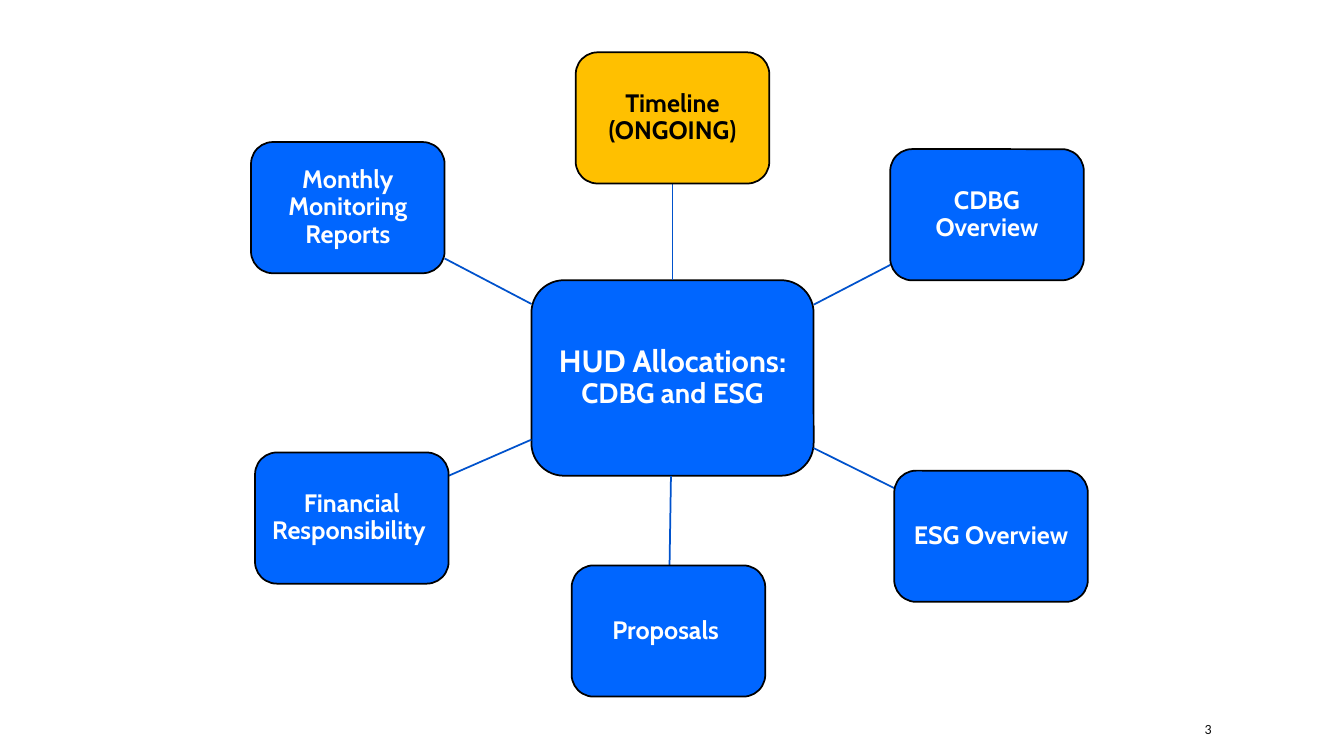
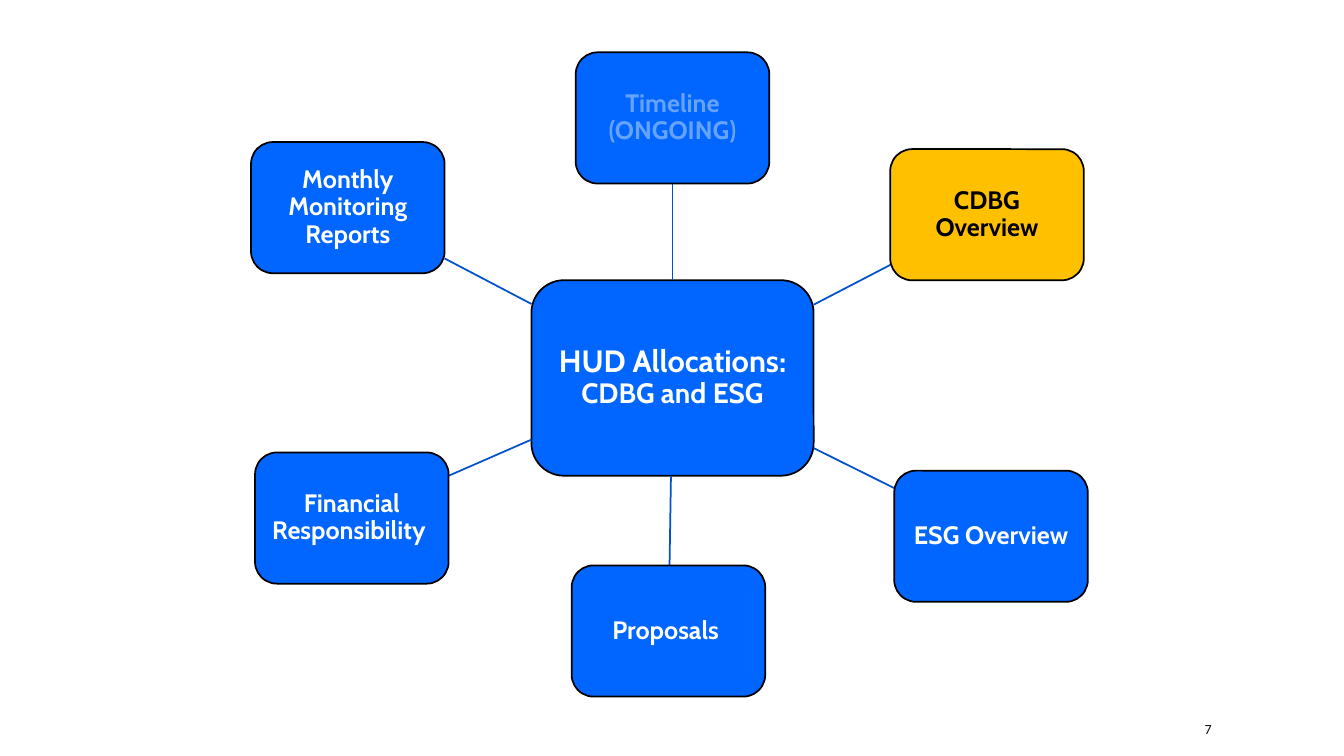
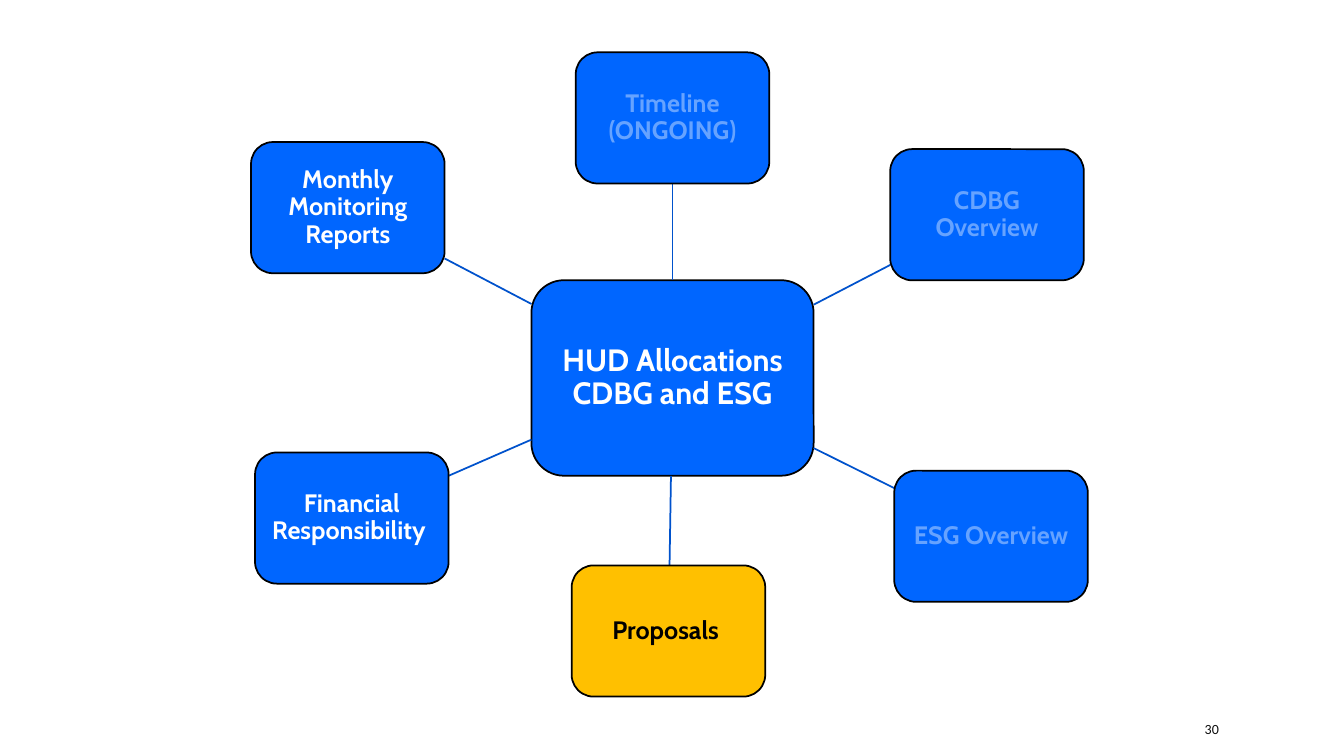
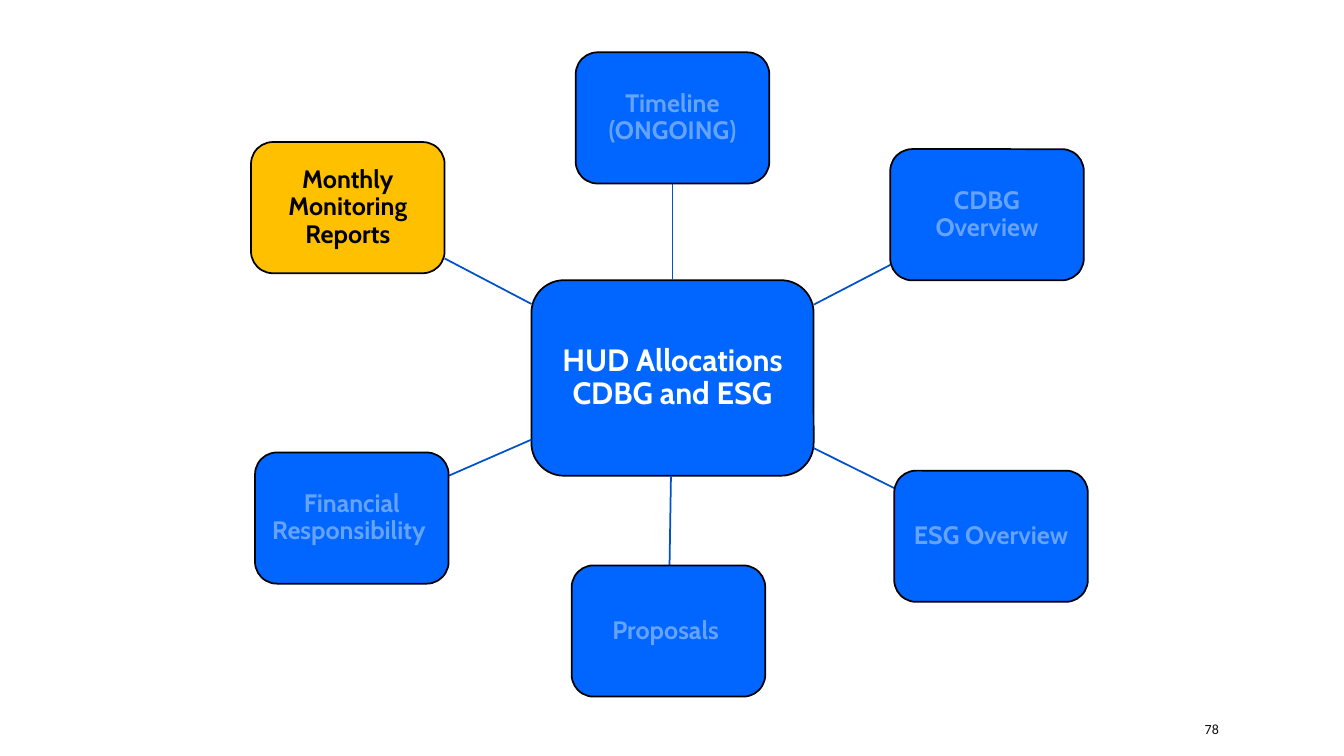
import lxml.etree
import pptx
import pptx.dml.color
import pptx.enum.shapes
import pptx.enum.text
import pptx.oxml.ns
import pptx.util

RGBColor = pptx.dml.color.RGBColor
BLUE = RGBColor(0x00, 0x66, 0xFF)
NAVY = RGBColor(0x00, 0x52, 0xCC)
PALE = RGBColor(0x66, 0xA3, 0xFF)
GOLD = RGBColor(0xFF, 0xC0, 0x00)
WHITE = RGBColor(0xFF, 0xFF, 0xFF)
BLACK = RGBColor(0x00, 0x00, 0x00)
INK = RGBColor(0x0D, 0x0D, 0x0D)

# The grid has 100 columns and 100 rows
WIDE = pptx.util.Inches(13.33)
HIGH = pptx.util.Inches(7.5)
COL = WIDE / 100
ROW = HIGH / 100

EDGE = pptx.util.Pt(1.25)
MIDDLE = pptx.enum.text.MSO_ANCHOR.MIDDLE
CENTER = pptx.enum.text.PP_ALIGN.CENTER

# Centres and sizes in columns and rows
HUB = (50.04, 50)
HUB_SIZE = (21, 25.87)
NODE_SIZE = (14.4, 17.35)
PAGE_BOX = (88.9, 94.4, 7.95, 4)

# Steps in the order they are worked through
STEPS = [
    ("Timeline (ONGOING)", (50.04, 15.6)),
    ("CDBG Overview", (73.44, 28.4)),
    ("ESG Overview", (73.74, 70.93)),
    ("Proposals ", (49.74, 83.47)),
    ("Financial Responsibility ", (26.18, 68.53)),
    ("Monthly Monitoring Reports", (25.88, 27.47)),
]

SPLIT = [("HUD Allocations: ", 22), ("CDBG and ESG", 20)]
PLAIN = [("HUD Allocations CDBG and ESG", 22)]

# Page number, current step, hub text
PAGES = [(3, 0, SPLIT), (7, 1, SPLIT), (30, 3, PLAIN), (78, 5, PLAIN)]


def apply(item, look):
    for name, value in look.items():
        setattr(item, name, value)


def write(line, text, size, color, face="Cabin", bold=True):
    run = line.add_run()
    run.text = text
    apply(run.font, {"name": face, "size": pptx.util.Pt(size), "bold": bold})
    run.font.color.rgb = color


def add_box(slide, mid, size, runs, fill, color, pad):
    """Rounded box around its centre, with its label inside."""
    left, top = mid[0] - size[0] / 2, mid[1] - size[1] / 2
    box = slide.shapes.add_shape(
        pptx.enum.shapes.MSO_SHAPE.ROUNDED_RECTANGLE,
        int(left * COL), int(top * ROW), int(size[0] * COL), int(size[1] * ROW))
    box.shadow.inherit = False
    box.fill.solid()
    box.fill.fore_color.rgb = fill
    box.line.color.rgb = BLACK
    box.line.width = EDGE
    frame = box.text_frame
    inset = pptx.util.Inches(pad)
    apply(frame, {"word_wrap": True, "vertical_anchor": MIDDLE,
                  "margin_left": inset, "margin_right": inset,
                  "margin_top": inset, "margin_bottom": inset})
    line = frame.paragraphs[0]
    apply(line, {"alignment": CENTER, "line_spacing": 0.9})
    for text, points in runs:
        write(line, text, points, color)


def rim(mid, size, goal):
    """Point where the line from a box's centre to the goal leaves the box."""
    gaps = [goal[i] - mid[i] for i in range(2)]
    share = min(size[i] / 2 / abs(gaps[i]) for i in range(2) if gaps[i])
    return int((mid[0] + share * gaps[0]) * COL), int((mid[1] + share * gaps[1]) * ROW)


def add_link(slide, mid):
    """Straight line from the hub to a node."""
    link = slide.shapes.add_connector(
        pptx.enum.shapes.MSO_CONNECTOR.STRAIGHT,
        *rim(HUB, HUB_SIZE, mid), *rim(mid, NODE_SIZE, HUB))
    link.line.color.rgb = NAVY
    link.line.width = EDGE
    lxml.etree.SubElement(link._element.spPr, pptx.oxml.ns.qn("a:effectLst"))


def add_page(slide, number):
    """Page number in the footer."""
    left, top, width, height = PAGE_BOX
    note = slide.shapes.add_textbox(
        int(left * COL), int(top * ROW), int(width * COL), int(height * ROW))
    apply(note.text_frame, {"word_wrap": True, "vertical_anchor": MIDDLE})
    write(note.text_frame.paragraphs[0], str(number), 10, INK, "Calibri", False)


def add_map(slide, now, title):
    """Hub with its ring of steps: past ones pale, the current one gold."""
    add_box(slide, HUB, HUB_SIZE, title, BLUE, WHITE, 0.06)
    for step, (text, mid) in enumerate(STEPS):
        add_link(slide, mid)
        fill = GOLD if step == now else BLUE
        color = BLACK if step == now else PALE if step < now else WHITE
        add_box(slide, mid, NODE_SIZE, [(text, 18)], fill, color, 0.05)


def main():
    deck = pptx.Presentation()
    apply(deck, {"slide_width": WIDE, "slide_height": HIGH})
    for number, now, title in PAGES:
        slide = deck.slides.add_slide(deck.slide_layouts[6])
        add_page(slide, number)
        add_map(slide, now, title)
    deck.save("out.pptx")


if __name__ == "__main__":
    main()
